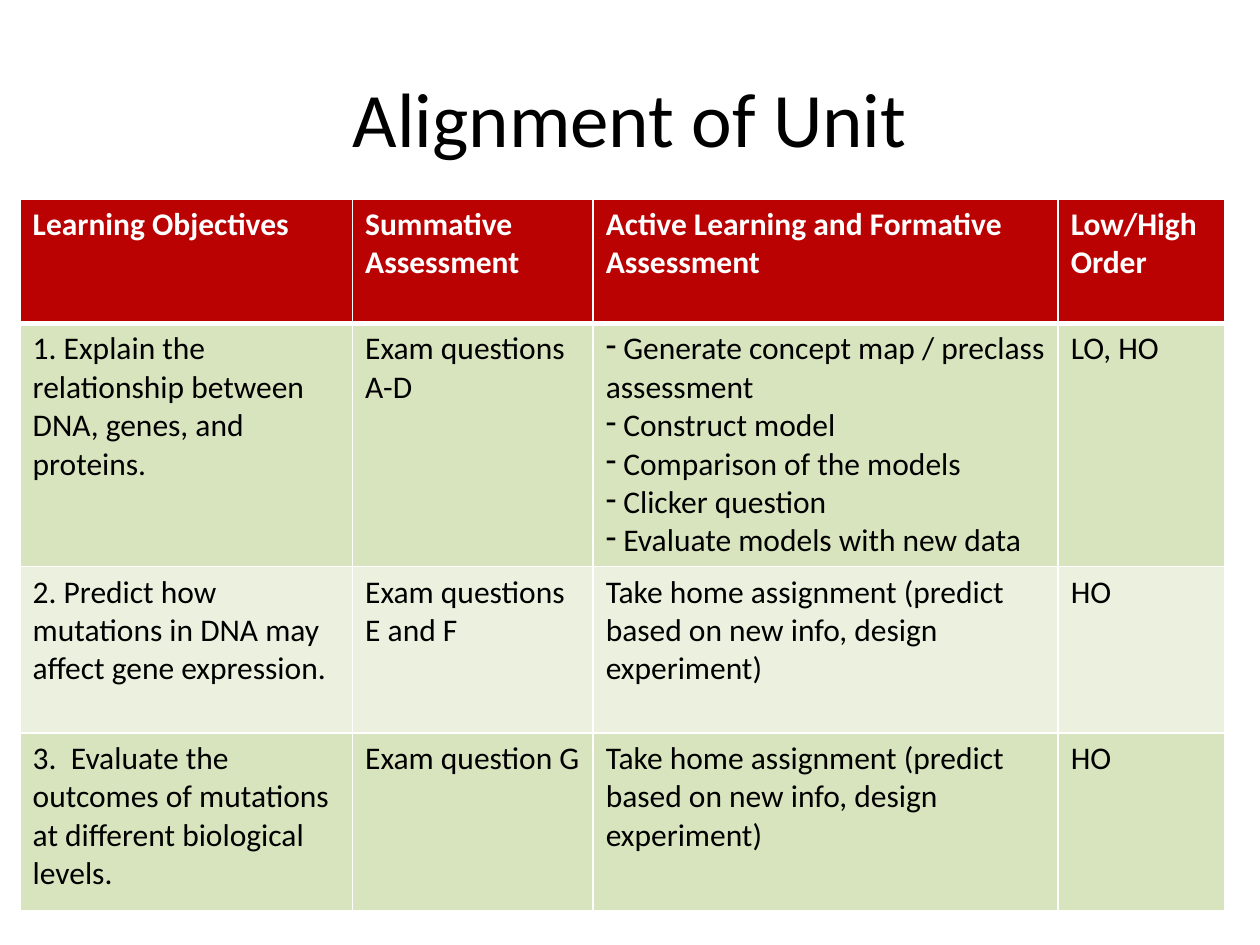
"""Build the unit alignment slide with its table of objectives and assessments."""
from lxml.etree import SubElement
from pptx import Presentation
from pptx.dml.color import RGBColor
from pptx.enum.text import MSO_ANCHOR, PP_ALIGN
from pptx.oxml import parse_xml
from pptx.oxml.ns import nsdecls, qn
from pptx.util import Pt

TITLE = "Alignment of Unit"
HOME = "Take home assignment (predict based on new info, design experiment)"
ROWS = [
    ["Learning Objectives", "Summative Assessment",
     "Active Learning and Formative Assessment", "Low/High Order"],
    ["1. Explain the relationship between DNA, genes, and proteins.",
     "Exam questions A-D",
     [" Generate concept map / preclass assessment", " Construct model",
      " Comparison of the models", " Clicker question",
      " Evaluate models with new data"],
     "LO, HO"],
    ["2. Predict how mutations in DNA may affect gene expression.",
     "Exam questions E and F", HOME, "HO"],
    ["3.  Evaluate the outcomes of mutations at different biological levels.",
     "Exam question G", HOME, "HO"],
]
COL_WIDTHS = [190, 137.5, 265.7, 95]
ROW_HEIGHTS = [71, 139, 95, 101.5]
LEFT, TOP = 11.5, 113.8
TITLE_BOX = {"left": 36, "top": 21.6, "width": 648, "height": 90}
TITLE_FONT = {"name": "Calibri", "size": Pt(44), "bold": False}
HEAD_FONT = {"name": "Calibri", "size": Pt(18), "bold": True}
BODY_FONT = {**HEAD_FONT, "bold": False}
HEAD_FILL, BAND_FILLS = "BB0202", ["EBF1DE", "D7E4BD"]
WHITE, BLACK = "FFFFFF", "000000"


def color(hex_text):
    return RGBColor.from_string(hex_text)


def add_text(p, text, values, ink):
    r = p.add_run()
    r.text = text
    for name, value in values.items():
        setattr(r.font, name, value)
    r.font.color.rgb = color(ink)


def add_dash(p):
    pPr = p._p.get_or_add_pPr()
    pPr.set("marL", "0")
    pPr.set("indent", "0")
    SubElement(pPr, qn("a:buFontTx"))
    SubElement(pPr, qn("a:buChar")).set("char", "-")


def set_borders(cell, widths):
    tcPr = cell._tc.get_or_add_tcPr()
    for i, (side, width) in enumerate(widths.items()):
        tcPr.insert(i, parse_xml(
            f'<a:ln{side} {nsdecls("a")} w="{Pt(width)}"><a:solidFill>'
            f'<a:srgbClr val="{WHITE}"/></a:solidFill></a:ln{side}>'))


def fill_cell(cell, content, row):
    head = row == 0
    items = content if isinstance(content, list) else [content]
    tf = cell.text_frame
    for i, text in enumerate(items):
        p = tf.add_paragraph() if i else tf.paragraphs[0]
        if items is content:
            add_dash(p)
        add_text(p, text, HEAD_FONT if head else BODY_FONT, WHITE if head else BLACK)
    cell.fill.solid()
    cell.fill.fore_color.rgb = color(HEAD_FILL if head else BAND_FILLS[row % 2])
    set_borders(cell, {"L": 1, "R": 1, "T": 3 if row == 1 else 1, "B": 3 if head else 1})


def add_title(s):
    sp = s.shapes.title
    for name, value in TITLE_BOX.items():
        setattr(sp, name, Pt(value))
    tf = sp.text_frame
    tf.vertical_anchor = MSO_ANCHOR.MIDDLE
    p = tf.paragraphs[0]
    p.alignment = PP_ALIGN.CENTER
    add_text(p, TITLE, TITLE_FONT, BLACK)


def add_alignment_table(s):
    table = s.shapes.add_table(
        len(ROWS), len(COL_WIDTHS), Pt(LEFT), Pt(TOP),
        Pt(sum(COL_WIDTHS)), Pt(sum(ROW_HEIGHTS))).table
    for column, width in zip(table.columns, COL_WIDTHS):
        column.width = Pt(width)
    for i, (height, contents) in enumerate(zip(ROW_HEIGHTS, ROWS)):
        table.rows[i].height = Pt(height)
        for j, content in enumerate(contents):
            fill_cell(table.cell(i, j), content, i)


def main():
    prs = Presentation()
    prs.slide_width, prs.slide_height = Pt(720), Pt(540)
    s = prs.slides.add_slide(prs.slide_layouts[5])
    add_title(s)
    add_alignment_table(s)
    prs.save("out.pptx")


if __name__ == "__main__":
    main()
